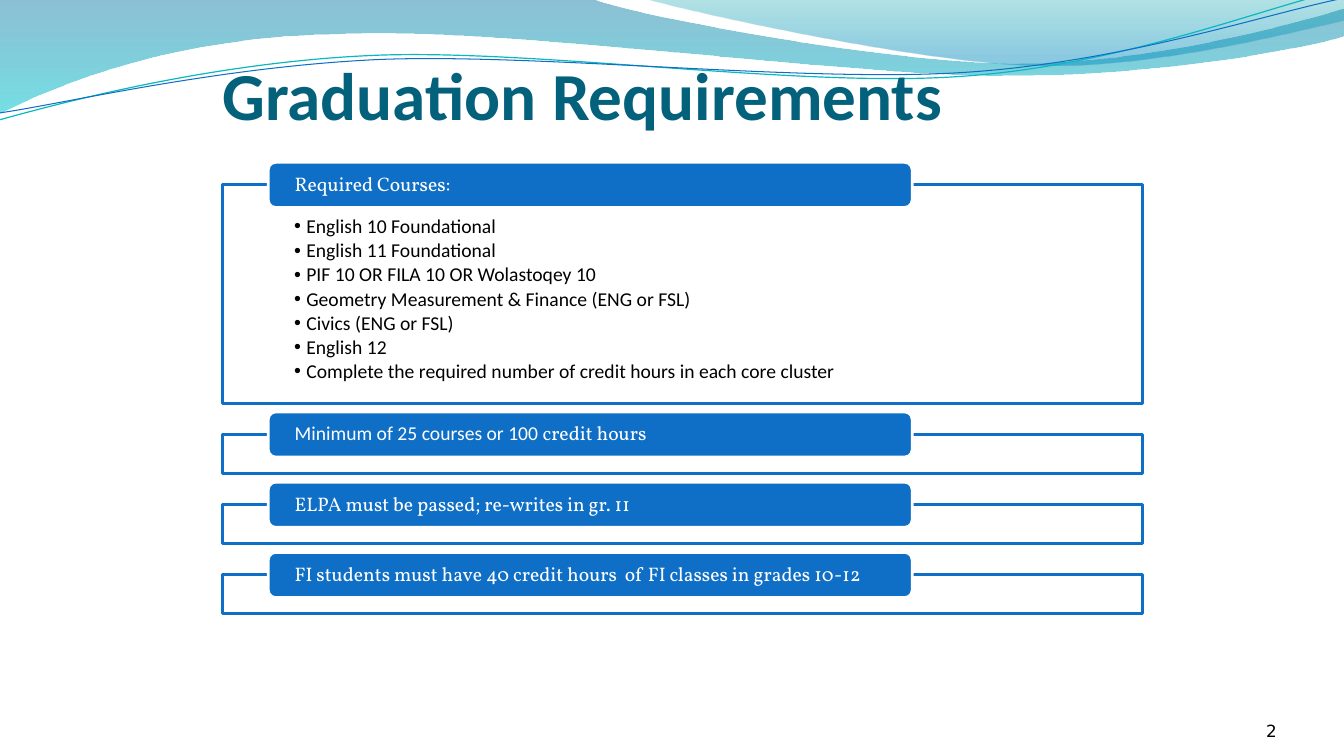
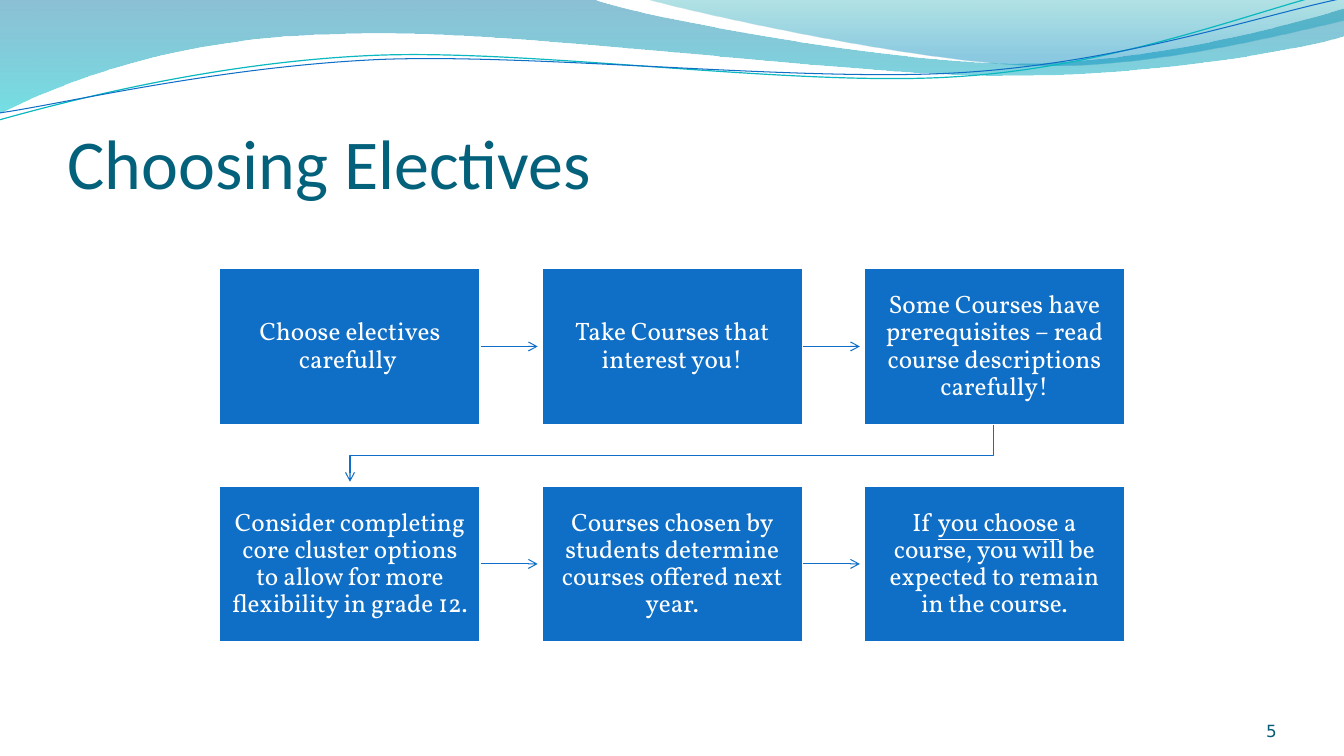
from lxml.etree import Element, SubElement
from pptx import Presentation
from pptx.dml.color import RGBColor
from pptx.enum.shapes import MSO_CONNECTOR as Link, MSO_SHAPE as Kind
from pptx.enum.text import MSO_ANCHOR as Anchor, MSO_AUTO_SIZE as Fit, PP_ALIGN as Align
from pptx.oxml.ns import qn
from pptx.util import Cm, Pt

BLUE = RGBColor(0x0F, 0x6F, 0xC6)
TEAL = RGBColor(0x0A, 0xB8, 0xBF)
DEEP = RGBColor(0x04, 0x61, 0x7B)
DUSK = RGBColor(0x04, 0x5D, 0x75)
WHITE = RGBColor(0xFF, 0xFF, 0xFF)
BLACK = RGBColor(0x00, 0x00, 0x00)
SEA = RGBColor(0x00, 0x74, 0xA1)
AQUA = RGBColor(0x00, 0xC6, 0xCF)
MINT = RGBColor(0x00, 0xA1, 0xA9)
SKY = RGBColor(0x00, 0x8B, 0xBF)

SANS, SERIF, PLAIN = "Calibri", "Vollkorn", "DejaVu Sans"
INCH = Cm(2.54)


def paint(shape, fill, edge):
    shape.shadow.inherit = False
    shape.fill.solid()
    shape.fill.fore_color.rgb = fill
    shape.line.color.rgb = edge
    shape.line.width = Pt(2)


def write(frame, lines, face, size, tone, pads, look, place):
    sides = ("margin_left", "margin_top", "margin_right", "margin_bottom")
    box = dict(zip(sides, map(Cm, pads)), word_wrap=True, auto_size=Fit.NONE, vertical_anchor=place)
    for name, val in box.items():
        setattr(frame, name, val)
    for i, line in enumerate(lines):
        par = frame.add_paragraph() if i else frame.paragraphs[0]
        for name, val in look.items():
            setattr(par, name, val)
        for text, extra in line:
            run = par.add_run()
            run.text = text
            style = {"name": face, "size": Pt(size), "bold": False} | extra
            for name, val in style.items():
                setattr(run.font, name, val)
            run.font.color.rgb = tone


deck = Presentation()
deck.slide_width, deck.slide_height = Cm(33.87), Cm(19.05)
rules = deck.slides.add_slide(deck.slide_layouts[1])
picks = deck.slides.add_slide(deck.slide_layouts[5])

waves = [
    ([[(0, 0)], [(5.87, -0.01)],
      [(6.34, 0.17), (8.85, 0.63), (10.11, 0.63)],
      [(11.38, 0.63), (12.78, 0.26), (13.33, 0.09)], [(13.35, 0.36)],
      [(13.11, 0.44), (11.6, 0.76), (9.94, 0.75)],
      [(8.29, 0.75), (5.09, 0.28), (3.43, 0.34)],
      [(1.72, 0.36), (0.61, 0.83), (-0.01, 1.13)]],
     [(0, SEA, 45), (1, AQUA, 55)], None),
    ([[(6.39, -0.01)],
      [(6.79, 0.11), (9.09, 0.62), (10.25, 0.65)],
      [(11.41, 0.69), (12.82, 0.32), (13.33, 0.21)], [(13.33, 0)]],
     [(0, MINT, 30), (0.8, SKY, 45)], None),
    ([[(-0.01, 1.19)],
      [(0.64, 1.01), (2.11, 0.62), (3.69, 0.55)],
      [(5.27, 0.48), (7.9, 0.87), (9.5, 0.76)],
      [(11.1, 0.66), (12.52, 0.08), (13.31, -0.1)]], None, (TEAL, 0.85)),
    ([[(0, 1.12)],
      [(0.63, 1.03), (2.18, 0.66), (3.78, 0.59)],
      [(5.37, 0.53), (7.96, 0.82), (9.55, 0.72)],
      [(11.15, 0.62), (12.55, 0.14), (13.34, -0.02)]], None, (BLUE, 0.75)),
]
tree = deck.slide_master.shapes._spTree
for spot, (parts, stops, pen) in enumerate(waves, 2):
    dots = [(x * INCH, y * INCH) for part in parts for x, y in part]
    path = rules.shapes.build_freeform(*dots[0])
    path.add_line_segments(dots[1:], close=bool(stops))
    wave = path.convert_to_shape()
    steps = iter(list(wave._element.spPr.iter(qn("a:lnTo"))))
    for part in parts[1:]:
        group = [next(steps) for _ in part]
        if len(group) == 3:
            curve = Element(qn("a:cubicBezTo"))
            group[0].addprevious(curve)
            for step in group:
                curve.append(step[0])
                step.getparent().remove(step)
    wave.shadow.inherit = False
    if stops:
        wave.line.fill.background()
        wave.fill.gradient()
        wave.fill.gradient_angle = 270
        for stop, (at, tone, _) in zip(wave.fill.gradient_stops, stops):
            stop.position, stop.color.rgb = at, tone
        tints = wave._element.spPr.iter(qn("a:srgbClr"))
        for tint, (_, _, part) in zip(list(tints), stops):
            SubElement(tint, qn("a:alpha")).set("val", str(part * 1000))
    else:
        wave.fill.background()
        wave.line.color.rgb, wave.line.width = pen[0], Pt(pen[1])
    tree.insert(spot, wave._element)

heads = [
    (rules, "Graduation Requirements", 48, True, (5.61, 1.09, 22.86, 2.29), "2", BLACK),
    (picks, "Choosing Electives", 50, False, (1.7, 1.96, 30.48, 3.18), "5", DUSK),
]
for slide, text, size, bold, area, num, tone in heads:
    title = slide.shapes.title
    title.left, title.top, title.width, title.height = map(Cm, area)
    write(title.text_frame, [[(text, {"bold": bold})]], SANS, size, DEEP,
          (0, 0.13, 0, 0), {"alignment": Align.LEFT}, Anchor.BOTTOM)
    foot = slide.shapes.add_textbox(Cm(29.36), Cm(17.65), Cm(2.82), Cm(1.02))
    write(foot.text_frame, [[(num, {})]], PLAIN, 12, tone,
          (0, 0, 0, 0), {"alignment": Align.RIGHT}, Anchor.BOTTOM)

courses = [
    "English 10 Foundational",
    "English 11 Foundational",
    "PIF 10 OR FILA 10 OR Wolastoqey 10",
    "Geometry Measurement & Finance (ENG or FSL)",
    "Civics (ENG or FSL)",
    "English 12",
    "Complete the required number of credit hours in each core cluster",
]
needs = [
    [("Required Courses:", {})],
    [("Minimum of 25 courses or 100", {"name": SANS}), (" credit hours", {})],
    [("ELPA must be passed; re-writes in gr. 11", {})],
    [("FI students must have 40 credit hours  of FI classes in grades 10-12", {})],
]
body = rules.placeholders[1]
write(body.text_frame, [[(text, {})] for text in courses], SANS, 14, BLACK, (1.8, 0.81, 1.8, 0.28),
      {"alignment": Align.LEFT, "line_spacing": 0.9, "space_before": Pt(0), "space_after": Pt(2.1)},
      Anchor.TOP)
for par in body.text_frame.paragraphs:
    props = par._p.get_or_add_pPr()
    props.set("marL", str(Cm(0.31)))
    props.set("indent", str(Cm(-0.31)))

top = 4.65
for i, need in enumerate(needs):
    tall = 0.99 if i else 5.51
    area = [Cm(v) for v in (5.61, top, 23.19, tall)]
    if i:
        panel = rules.shapes.add_shape(Kind.RECTANGLE, *area)
    else:
        panel = body
        panel.left, panel.top, panel.width, panel.height = area
    paint(panel, WHITE, BLUE)
    tab = rules.shapes.add_shape(Kind.ROUNDED_RECTANGLE, Cm(6.76), Cm(top - 0.56), Cm(16.23), Cm(1.14))
    paint(tab, BLUE, WHITE)
    write(tab.text_frame, [need], SERIF, 14, WHITE, (0.61, 0, 0.61, 0),
          {"alignment": Align.LEFT, "line_spacing": 0.9}, Anchor.MIDDLE)
    top += tall + 0.78

tips = [
    [("Choose electives carefully ", {})],
    [("Take Courses that interest you!", {})],
    [("Some Courses have prerequisites – read course descriptions carefully!", {})],
    [("Consider completing core cluster options to allow for more flexibility in grade 12.", {})],
    [("Courses chosen by students determine courses offered next year.", {})],
    [("If ", {}), ("you choose", {"underline": True}),
     (" a course, you will be expected to remain in the course.", {})],
]
wide, high = 6.6, 3.96
links = []
for i, tip in enumerate(tips):
    row, col = divmod(i, 3)
    x, y = 5.52 + col * 8.12, 6.75 + row * 5.48
    card = picks.shapes.add_shape(Kind.RECTANGLE, Cm(x), Cm(y), Cm(wide), Cm(high))
    paint(card, BLUE, WHITE)
    write(card.text_frame, [tip], SERIF, 18, WHITE, (0.33,) * 4,
          {"alignment": Align.CENTER, "line_spacing": 0.9}, Anchor.MIDDLE)
    if col < 2:
        mid = Cm(y + high / 2)
        link = picks.shapes.add_connector(Link.STRAIGHT, Cm(x + wide), mid, Cm(x + wide + 1.43), mid)
        link.begin_connect(card, 3)
        links.append(link)

turn = picks.shapes.add_connector(Link.ELBOW, Cm(16.22), Cm(3.32), Cm(17.64), Cm(19.54))
turn._element.spPr.find(qn("a:xfrm")).set("rot", "5400000")
bend = SubElement(next(turn._element.spPr.iter(qn("a:avLst"))), qn("a:gd"))
bend.set("name", "adj1")
bend.set("fmla", "val 54000")
for link in [*links, turn]:
    link.line.color.rgb = BLUE
    link.line.width = Pt(0.75)
    SubElement(link.line._get_or_add_ln(), qn("a:tailEnd")).set("type", "arrow")
    SubElement(link._element.spPr, qn("a:effectLst"))

deck.save("out.pptx")
